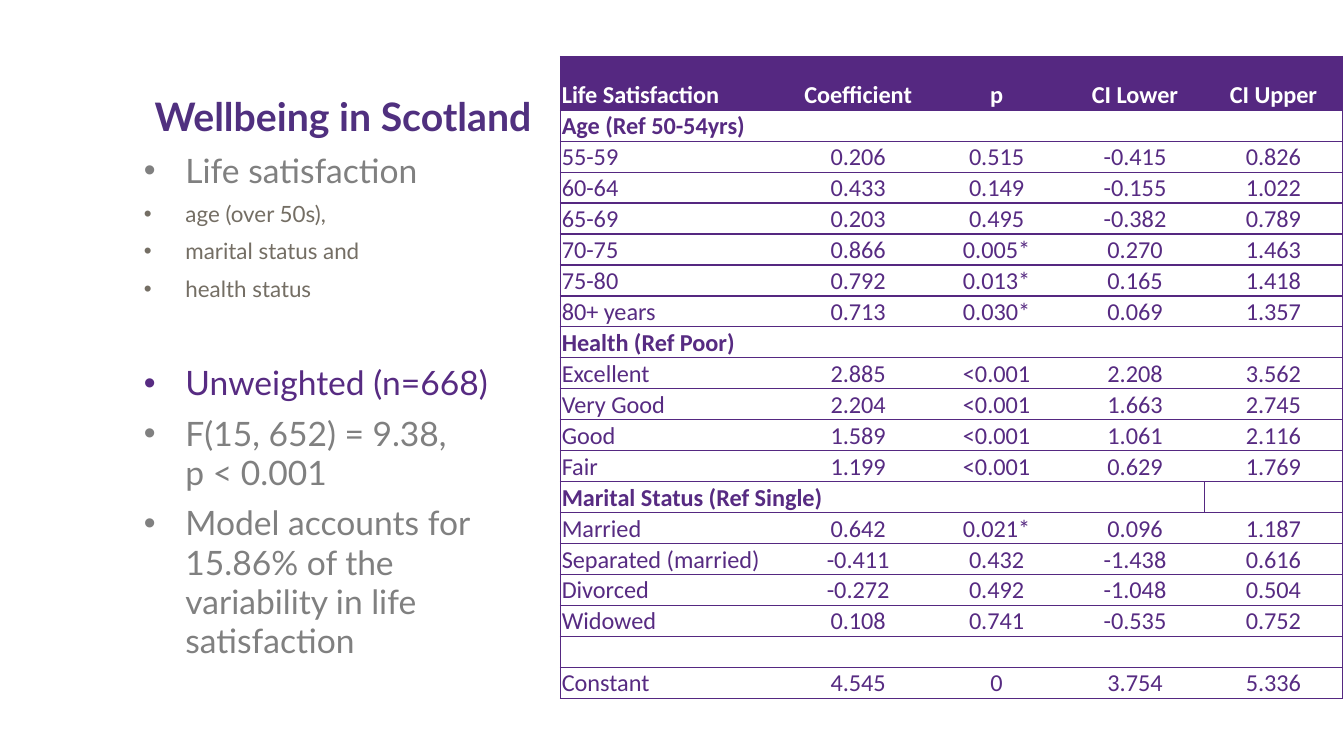
import pptx
import pptx.dml.color
import pptx.enum.text
import pptx.oxml.ns
import pptx.util
from lxml import etree

Inches = pptx.util.Inches
Pt = pptx.util.Pt
RGBColor = pptx.dml.color.RGBColor
PP_ALIGN = pptx.enum.text.PP_ALIGN
MSO_ANCHOR = pptx.enum.text.MSO_ANCHOR
qn = pptx.oxml.ns.qn

TITLE_PURPLE = RGBColor(0x50, 0x30, 0x7F)
TEXT_PURPLE = RGBColor(0x57, 0x2B, 0x82)
TABLE_PURPLE = RGBColor(0x55, 0x28, 0x81)
GREY = RGBColor(0x80, 0x80, 0x80)
WARM_GREY = RGBColor(0x74, 0x6E, 0x64)
WHITE = RGBColor(0xFF, 0xFF, 0xFF)

SLIDE_WIDTH = 10
SLIDE_HEIGHT = SLIDE_WIDTH * 9 / 16

TITLE = "Wellbeing in Scotland"

# Text, level, colour, space before in points
BULLETS = [
    ("Life satisfaction", 0, GREY, 0),
    ("age (over 50s),", 1, WARM_GREY, 0),
    ("marital status and", 1, WARM_GREY, 0),
    ("health status", 1, WARM_GREY, 0),
    ("Unweighted (n=668)", 0, TEXT_PURPLE, 27),
    ("F(15, 652) = 9.38, \vp < 0.001", 0, GREY, 0),
    ("Model accounts for 15.86% of the variability in life satisfaction", 0, GREY, 0),
]
LEVEL_SIZES = [(18, 21), (12, 14)]  # font size, line spacing

# Rows with a single entry are group headings; the empty row is a spacer
ROWS = [
    ("Life Satisfaction", "Coefficient", "p", "CI Lower", "CI Upper"),
    ("Age (Ref 50-54yrs)",),
    ("55-59", "0.206", "0.515", "-0.415", "0.826"),
    ("60-64", "0.433", "0.149", "-0.155", "1.022"),
    ("65-69", "0.203", "0.495", "-0.382", "0.789"),
    ("70-75", "0.866", "0.005*", "0.270", "1.463"),
    ("75-80", "0.792", "0.013*", "0.165", "1.418"),
    ("80+ years", "0.713", "0.030*", "0.069", "1.357"),
    ("Health (Ref Poor)",),
    ("Excellent", "2.885", "<0.001", "2.208", "3.562"),
    ("Very Good", "2.204", "<0.001", "1.663", "2.745"),
    ("Good", "1.589", "<0.001", "1.061", "2.116"),
    ("Fair", "1.199", "<0.001", "0.629", "1.769"),
    ("Marital Status (Ref Single)",),
    ("Married", "0.642", "0.021*", "0.096", "1.187"),
    ("Separated (married)", "-0.411", "0.432", "-1.438", "0.616"),
    ("Divorced", "-0.272", "0.492", "-1.048", "0.504"),
    ("Widowed", "0.108", "0.741", "-0.535", "0.752"),
    (),
    ("Constant", "4.545", "0", "3.754", "5.336"),
]
MARITAL_ROW = ROWS.index(("Marital Status (Ref Single)",))
COLUMN_WIDTHS = [1.7] + [1.03] * 4
ROW_HEIGHTS = [0.4] + [0.23] * (len(ROWS) - 1)
LAST_COLUMN = len(COLUMN_WIDTHS) - 1


def place(shape, left, top, width, height):
    shape.left, shape.top = Inches(left), Inches(top)
    shape.width, shape.height = Inches(width), Inches(height)


def prepare_frame(shape):
    """Return the shape's text frame, top-anchored without insets or autofit."""
    frame = shape.text_frame
    frame.margin_left = frame.margin_right = frame.margin_top = frame.margin_bottom = 0
    frame.vertical_anchor = MSO_ANCHOR.TOP
    frame.auto_size = pptx.enum.text.MSO_AUTO_SIZE.NONE
    frame.word_wrap = True
    return frame


def add_run(paragraph, text, font_name, size, color, bold=False):
    for index, line in enumerate(text.split("\v")):
        if index:
            paragraph.add_line_break()
        run = paragraph.add_run()
        run.text = line
        run.font.name = font_name
        run.font.size = Pt(size)
        run.font.color.rgb = color
        run.font.bold = bold


def add_title(slide):
    shape = slide.shapes.title
    place(shape, 1.15, 0.73, 3.02, 0.61)
    paragraph = prepare_frame(shape).paragraphs[0]
    paragraph.alignment = PP_ALIGN.LEFT
    paragraph.line_spacing = Pt(22)
    add_run(paragraph, TITLE, "Lato", 21, TITLE_PURPLE, True)


def add_bullets(slide):
    shape = slide.placeholders[1]
    place(shape, 1.07, 1.12, 2.72, 3.88)
    frame = prepare_frame(shape)
    for index, (text, level, color, space_before) in enumerate(BULLETS):
        paragraph = frame.add_paragraph() if index else frame.paragraphs[0]
        size, spacing = LEVEL_SIZES[level]
        paragraph.level = level
        paragraph.alignment = PP_ALIGN.LEFT
        paragraph.line_spacing = Pt(spacing)
        paragraph.space_before = Pt(space_before)
        paragraph.space_after = Pt(6)
        properties = paragraph._p.get_or_add_pPr()
        properties.set("marL", str(Inches(0.31)))
        properties.set("indent", str(-Inches(0.31)))
        etree.SubElement(properties, qn("a:buFont"), typeface="Arial")
        etree.SubElement(properties, qn("a:buChar"), char="•")
        add_run(paragraph, text, "Lato", size, color)


def set_borders(cell, visible_sides):
    properties = cell._tc.get_or_add_tcPr()
    for side in "LRTB":
        line = etree.SubElement(properties, qn(f"a:ln{side}"), w=str(Pt(0.75)))
        if side in visible_sides:
            fill = etree.SubElement(line, qn("a:solidFill"))
            etree.SubElement(fill, qn("a:srgbClr"), val=str(TABLE_PURPLE))
        else:
            etree.SubElement(line, qn("a:noFill"))


def fill_cell(cell, row, column):
    values = ROWS[row]
    is_header = row == 0
    sides = "TB"
    if column == 0 or (row == MARITAL_ROW and column == LAST_COLUMN):
        sides += "L"
    if column == LAST_COLUMN or (row == MARITAL_ROW and column == LAST_COLUMN - 1):
        sides += "R"
    set_borders(cell, sides)
    cell.fill.solid()
    cell.fill.fore_color.rgb = TABLE_PURPLE if is_header else WHITE
    cell.margin_left = cell.margin_right = cell.margin_top = Inches(0.01)
    cell.margin_bottom = 0
    cell.vertical_anchor = MSO_ANCHOR.BOTTOM
    paragraph = cell.text_frame.paragraphs[0]
    paragraph.alignment = PP_ALIGN.CENTER if column else PP_ALIGN.LEFT
    if column < len(values):
        color = WHITE if is_header else TEXT_PURPLE
        bold = is_header or len(values) == 1
        add_run(paragraph, values[column], "Calibri", 13, color, bold)
    else:
        # Keeps empty cells from stretching the row
        etree.SubElement(paragraph._p, qn("a:endParaRPr"), sz="1300")


def add_results_table(slide):
    table = slide.shapes.add_table(
        len(ROWS), len(COLUMN_WIDTHS), Inches(4.17), Inches(0.42),
        Inches(sum(COLUMN_WIDTHS)), Inches(sum(ROW_HEIGHTS))).table
    table.horz_banding = False
    for column, width in enumerate(COLUMN_WIDTHS):
        table.columns[column].width = Inches(width)
    for row, height in enumerate(ROW_HEIGHTS):
        table.rows[row].height = Inches(height)
        for column in range(len(COLUMN_WIDTHS)):
            fill_cell(table.cell(row, column), row, column)
    table.cell(MARITAL_ROW, 0).merge(table.cell(MARITAL_ROW, 1))


def main():
    presentation = pptx.Presentation()
    presentation.slide_width = Inches(SLIDE_WIDTH)
    presentation.slide_height = Inches(SLIDE_HEIGHT)
    slide = presentation.slides.add_slide(presentation.slide_layouts[1])
    add_title(slide)
    add_bullets(slide)
    add_results_table(slide)
    presentation.save("out.pptx")


if __name__ == "__main__":
    main()
